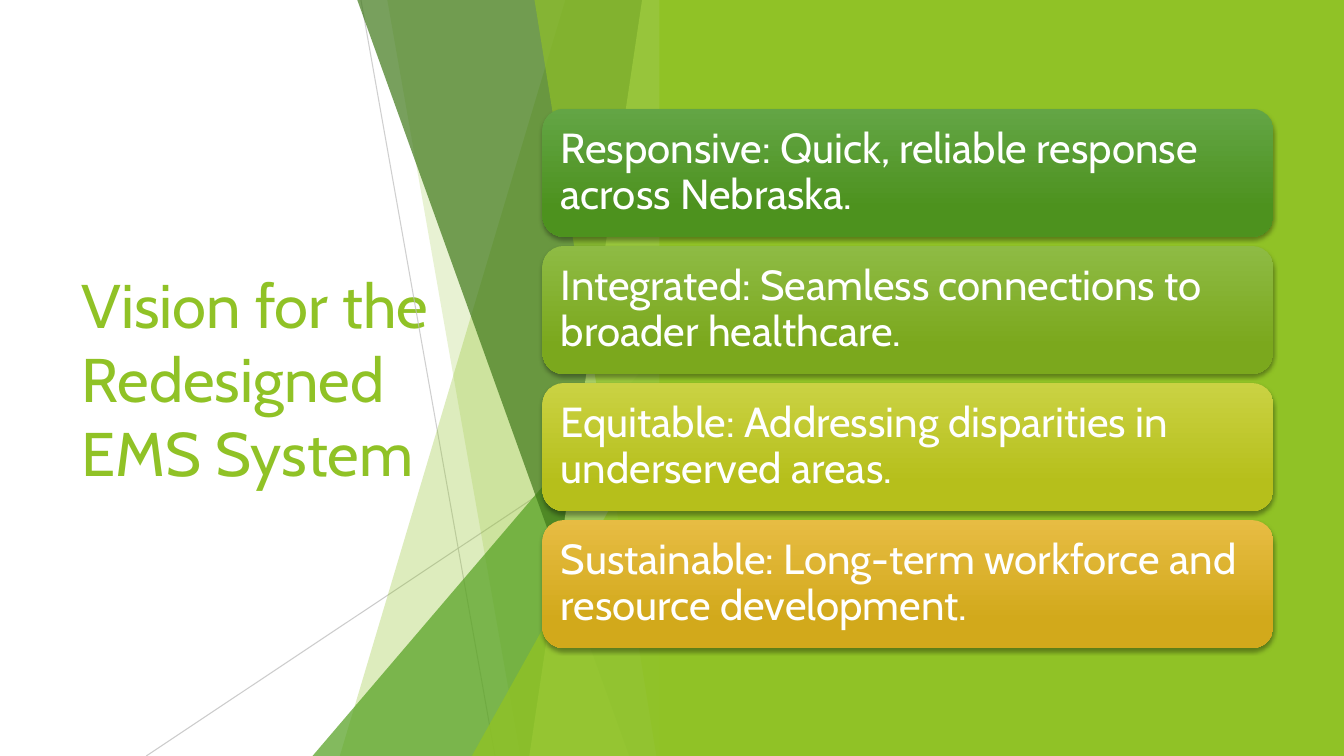
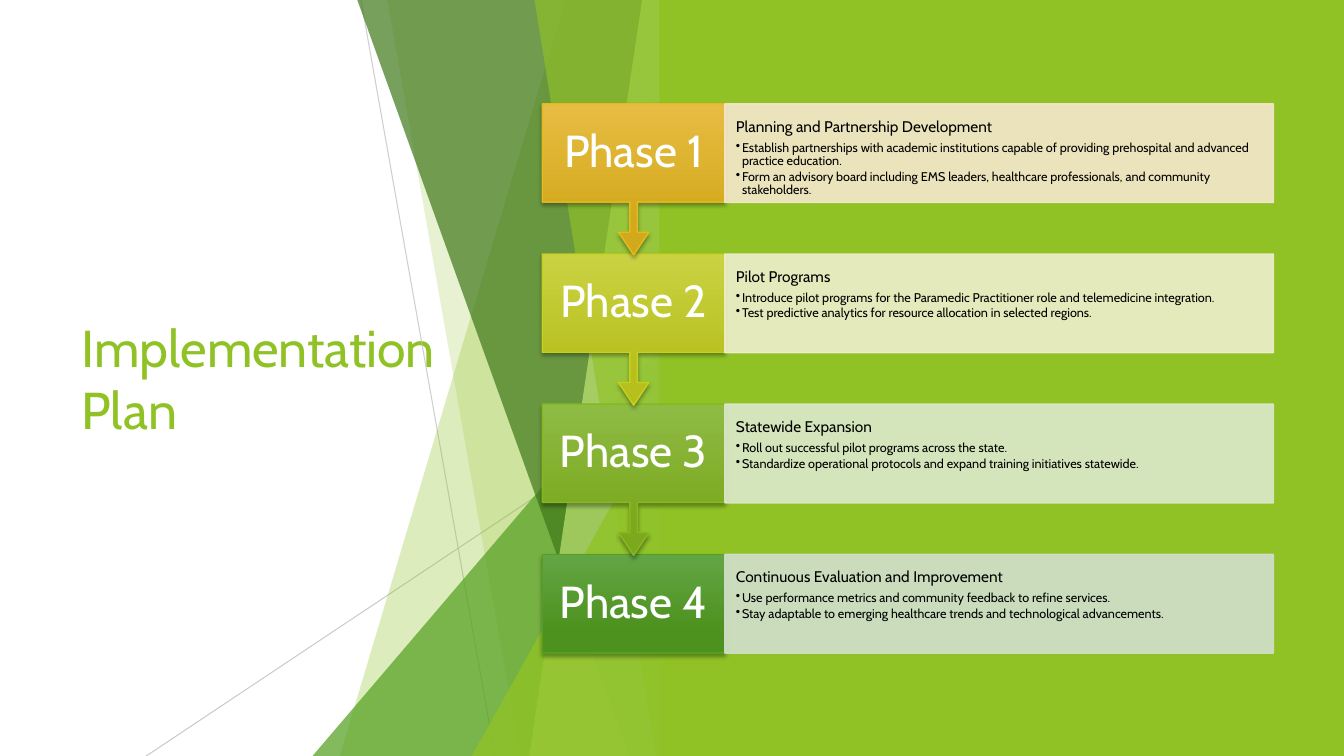
from dataclasses import dataclass
from typing import Any

import lxml.etree
import pptx
import pptx.dml.color
import pptx.enum.shapes
import pptx.enum.text
import pptx.oxml.ns
import pptx.util

EMU_PER_PX = 9144  # 100 px to the inch
SLIDE_WIDTH, SLIDE_HEIGHT = 1333, 750
TITLE_BOX = (71, 151, 388, 448)
FONT = "Cabin"
COLORS = {
    "white": "FFFFFF", "black": "000000", "hairline": "BFBFBF",
    "lime": "90C226", "green": "54A021", "forest": "3F7819", "pale": "C0E474",
}
SHAPES = pptx.enum.shapes.MSO_SHAPE
ANCHOR = pptx.enum.text.MSO_ANCHOR
ALIGN = pptx.enum.text.PP_ALIGN


@dataclass(frozen=True)
class Tone:
    top: str
    bottom: str
    line: str
    tint: str


@dataclass(frozen=True)
class Hairline:
    start: tuple[int, int]
    end: tuple[int, int]
    opacity: int


@dataclass(frozen=True)
class Facet:
    """A translucent polygon, or a right triangle when it has a box."""
    color: str
    opacity: int
    points: tuple[tuple[int, int], ...] = ()
    box: tuple[int, int, int, int] | None = None


@dataclass(frozen=True)
class Phase:
    tone: str
    heading: str
    bullets: tuple[str, ...]


TONES = {
    "green": Tone("63A545", "4D921E", "54A021", "D1DFCD"),
    "leaf": Tone("8EBB44", "7BA81D", "86B820", "DCE8CC"),
    "citron": Tone("CAD243", "B6BF1B", "C7D01D", "EEEFCC"),
    "amber": Tone("E7BC43", "D2A91B", "E6B91E", "F5E7CD"),
}
HAIRLINES = (
    Hairline((358, 0), (491, 750), 75),
    Hairline((666, 403), (145, 750), 80),
)
FACETS = (
    Facet("lime", 30, ((561, -1), (666, -1), (666, 750), (337, 750))),
    Facet("lime", 20, ((384, -1), (667, -1), (667, 750), (516, 750))),
    Facet("green", 72, box=(310, 333, 356, 417)),
    Facet("forest", 70, ((354, -1), (666, -1), (666, 750), (624, 750))),
    Facet("pale", 70, ((637, -1), (666, -1), (666, 750), (525, 750))),
    Facet("lime", 65, ((530, -1), (666, -1), (666, 750), (651, 750))),
    Facet("lime", 80, box=(468, 393, 199, 357)),
)
VISION = (
    ("green", "Responsive: Quick, reliable response across Nebraska."),
    ("leaf", "Integrated: Seamless connections to broader healthcare."),
    ("citron", "Equitable: Addressing disparities in underserved areas."),
    ("amber", "Sustainable: Long-term workforce and resource development."),
)
PHASES = (
    Phase("amber", "Planning and Partnership Development", (
        "Establish partnerships with academic institutions capable of providing "
        "prehospital and advanced practice education.",
        "Form an advisory board including EMS leaders, healthcare professionals, "
        "and community stakeholders.")),
    Phase("citron", "Pilot Programs", (
        "Introduce pilot programs for the Paramedic Practitioner role and "
        "telemedicine integration.",
        "Test predictive analytics for resource allocation in selected regions.")),
    Phase("leaf", "Statewide Expansion", (
        "Roll out successful pilot programs across the state.",
        "Standardize operational protocols and expand training initiatives "
        "statewide.")),
    Phase("green", "Continuous Evaluation and Improvement", (
        "Use performance metrics and community feedback to refine services.",
        "Stay adaptable to emerging healthcare trends and technological "
        "advancements.")),
)


def px(length: int) -> int:
    return pptx.util.Emu(length * EMU_PER_PX)


def rgb(color: str) -> pptx.dml.color.RGBColor:
    return pptx.dml.color.RGBColor.from_string(color)


def apply_format(target: Any, values: dict[str, Any]) -> None:
    for name, value in values.items():
        setattr(target, name, value)


def add_child(parent: Any, tag: str, **attributes: Any) -> Any:
    return lxml.etree.SubElement(
        parent, pptx.oxml.ns.qn(tag),
        {name: str(value) for name, value in attributes.items()})


def set_opacity(shape: Any, opacity: int) -> None:
    """Apply one opacity to the fill and line colours of a shape."""
    for color in shape.element.spPr.iter(pptx.oxml.ns.qn("a:srgbClr")):
        add_child(color, "a:alpha", val=opacity * 1000)


def paint(shape: Any, color: str, line: str | None = None) -> None:
    shape.shadow.inherit = False
    shape.fill.solid()
    shape.fill.fore_color.rgb = rgb(color)
    outline(shape, line)


def outline(shape: Any, line: str | None) -> None:
    if line is None:
        shape.line.fill.background()
    else:
        shape.line.color.rgb = rgb(line)
        shape.line.width = pptx.util.Pt(1)


def paint_glossy(shape: Any, tone: Tone, line: str | None = None) -> None:
    """Vertical gradient with a soft shadow below."""
    shape.fill.gradient()
    shape.fill.gradient_angle = 270
    stops = zip(shape.fill.gradient_stops, (tone.top, tone.bottom), (0, 0.78))
    for stop, color, position in stops:
        stop.color.rgb = rgb(color)
        stop.position = position
    outline(shape, line)
    shape.shadow.inherit = False
    effects = shape.element.spPr.find(pptx.oxml.ns.qn("a:effectLst"))
    shadow = add_child(effects, "a:outerShdw", blurRad=pptx.util.Pt(3),
                       dist=pptx.util.Pt(2), dir=5400000, rotWithShape=0)
    add_child(add_child(shadow, "a:srgbClr", val=COLORS["black"]),
              "a:alpha", val=35000)


def add_box(slide: Any, preset: Any, box: tuple[int, int, int, int]) -> Any:
    return slide.shapes.add_shape(preset, *(px(length) for length in box))


def format_frame(shape: Any, anchor: Any, side: int, end: int) -> Any:
    frame = shape.text_frame
    apply_format(frame, {
        "word_wrap": True, "vertical_anchor": anchor,
        "margin_left": px(side), "margin_right": px(side),
        "margin_top": px(end), "margin_bottom": px(end),
    })
    return frame


def write(paragraph: Any, text: str, size: int, color: str,
          align: Any = ALIGN.LEFT, spacing: float = 0.9, after: float = 0) -> None:
    apply_format(paragraph, {"alignment": align, "line_spacing": spacing,
                             "space_before": pptx.util.Pt(0),
                             "space_after": pptx.util.Pt(after)})
    run = paragraph.add_run()
    run.text = text
    apply_format(run.font, {"name": FONT, "size": pptx.util.Pt(size)})
    run.font.color.rgb = rgb(COLORS[color])


def add_bullet(paragraph: Any) -> None:
    properties = paragraph._p.get_or_add_pPr()
    properties.set("marL", str(px(6)))
    properties.set("indent", str(-px(6)))
    add_child(properties, "a:buChar", char="•")


def add_hairline(slide: Any, hairline: Hairline) -> None:
    connector = slide.shapes.add_connector(
        pptx.enum.shapes.MSO_CONNECTOR.STRAIGHT,
        *(px(length) for length in hairline.start + hairline.end))
    connector.line.color.rgb = rgb(COLORS["hairline"])
    connector.line.width = pptx.util.Pt(0.75)
    set_opacity(connector, hairline.opacity)
    add_child(connector.element.spPr, "a:effectLst")


def add_facet(slide: Any, facet: Facet) -> None:
    if facet.box:
        shape = add_box(slide, SHAPES.ISOSCELES_TRIANGLE, facet.box)
        shape.adjustments[0] = 1
    else:
        first, *others = [(px(x), px(y)) for x, y in facet.points]
        builder = slide.shapes.build_freeform(*first)
        builder.add_line_segments(others, close=True)
        shape = builder.convert_to_shape()
    paint(shape, COLORS[facet.color])
    set_opacity(shape, facet.opacity)


def add_slide(presentation: Any, title_text: str, title_size: int) -> Any:
    """Slide with the left title, the facets and the lime panel."""
    slide = presentation.slides.add_slide(presentation.slide_layouts[5])
    title = slide.shapes.title
    names = ("left", "top", "width", "height")
    apply_format(title, dict(zip(names, map(px, TITLE_BOX))))
    frame = format_frame(title, ANCHOR.MIDDLE, 10, 5)
    frame.auto_size = pptx.enum.text.MSO_AUTO_SIZE.NONE
    write(frame.paragraphs[0], title_text, title_size, "lime", spacing=1.0)
    for hairline in HAIRLINES:
        add_hairline(slide, hairline)
    for facet in FACETS:
        add_facet(slide, facet)
    panel = add_box(slide, SHAPES.RECTANGLE, (654, 0, SLIDE_WIDTH - 654, SLIDE_HEIGHT))
    paint(panel, COLORS["lime"])
    return slide


def add_vision_cards(slide: Any) -> None:
    for index, (tone, text) in enumerate(VISION):
        card = add_box(slide, SHAPES.ROUNDED_RECTANGLE,
                       (538, 108 + index * 136, 725, 127))
        paint_glossy(card, TONES[tone])
        frame = format_frame(card, ANCHOR.MIDDLE, 12, 12)
        write(frame.paragraphs[0], text, 30, "white")


def add_phase(slide: Any, number: int, phase: Phase) -> None:
    tone = TONES[phase.tone]
    top = 103 + (number - 1) * 149
    # Label, with an arrow down to the next phase
    if number < len(PHASES):
        label = add_box(slide, SHAPES.DOWN_ARROW_CALLOUT, (538, top, 181, 150))
        for index, value in enumerate((0.05, 0.1, 0.15, 0.65)):
            label.adjustments[index] = value
    else:
        label = add_box(slide, SHAPES.RECTANGLE, (538, top, 181, 98))
    paint_glossy(label, tone, tone.line)
    frame = format_frame(label, ANCHOR.MIDDLE, 13, 25)
    write(frame.paragraphs[0], f"Phase {number}", 32, "white", ALIGN.CENTER)
    # Details
    details = add_box(slide, SHAPES.RECTANGLE, (719, top, 544, 98))
    paint(details, tone.tint, tone.tint)
    set_opacity(details, 90)
    frame = format_frame(details, ANCHOR.TOP, 11, 15)
    write(frame.paragraphs[0], phase.heading, 11, "black", after=4)
    for text in phase.bullets:
        paragraph = frame.add_paragraph()
        paragraph.level = 1
        write(paragraph, text, 9, "black", after=1.4)
        add_bullet(paragraph)


def main() -> None:
    presentation = pptx.Presentation()
    presentation.slide_width = px(SLIDE_WIDTH)
    presentation.slide_height = px(SLIDE_HEIGHT)

    add_vision_cards(add_slide(presentation, "Vision for the Redesigned EMS System", 44))

    plan_slide = add_slide(presentation, "Implementation Plan", 37)
    # Last phase first, so that each arrow tip lies over the next label
    for number in range(len(PHASES), 0, -1):
        add_phase(plan_slide, number, PHASES[number - 1])

    presentation.save("out.pptx")


if __name__ == "__main__":
    main()
